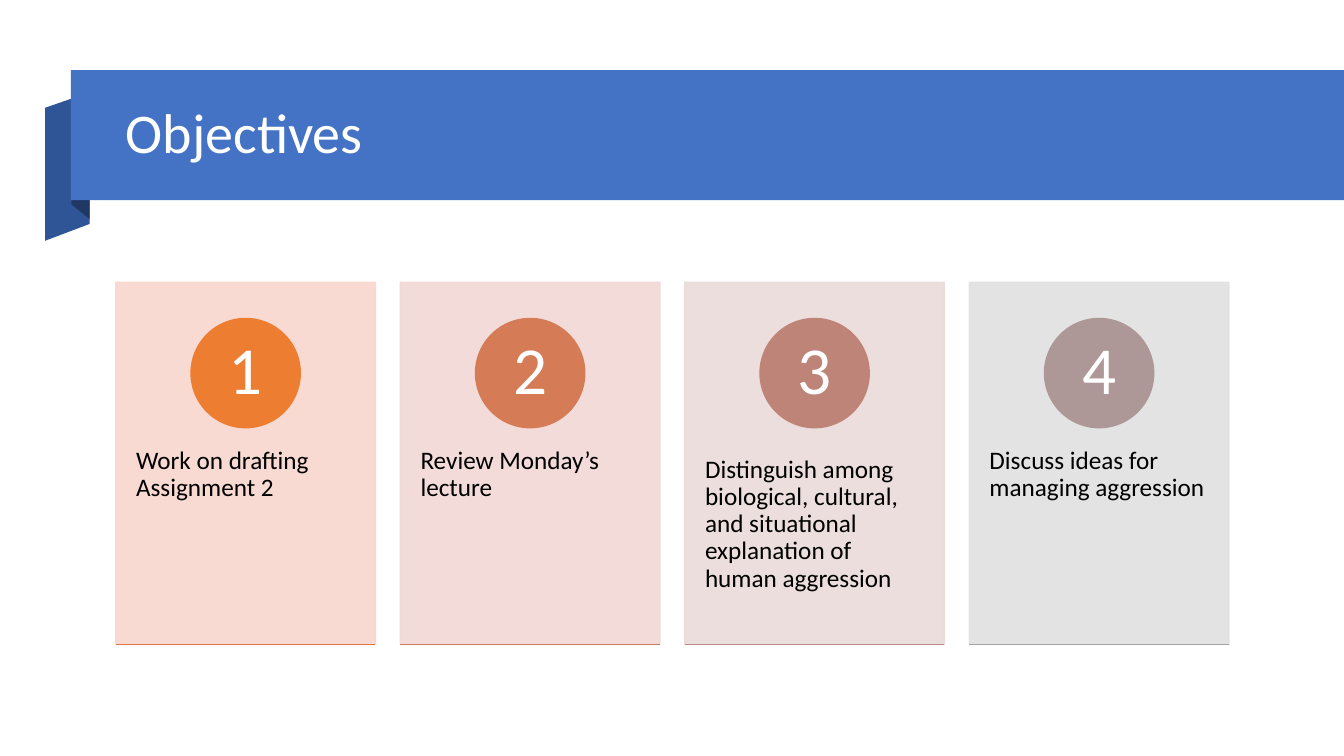
from dataclasses import dataclass

from lxml import etree
from pptx import Presentation
from pptx.dml.color import RGBColor
from pptx.enum.shapes import MSO_CONNECTOR, MSO_SHAPE
from pptx.enum.text import MSO_ANCHOR, PP_ALIGN
from pptx.oxml.ns import qn
from pptx.util import Pt

RECTANGLE, OVAL = MSO_SHAPE.RECTANGLE, MSO_SHAPE.OVAL
STRAIGHT = MSO_CONNECTOR.STRAIGHT
TOP, MIDDLE = MSO_ANCHOR.TOP, MSO_ANCHOR.MIDDLE
LEFT, CENTER = PP_ALIGN.LEFT, PP_ALIGN.CENTER


@dataclass(frozen=True)
class Theme:
    font: str = "Calibri"
    title_size: int = 40
    number_size: int = 48
    body_size: int = 18
    light: str = "FFFFFF"
    dark: str = "000000"
    banner: str = "4472C4"
    ribbon: str = "2F5597"
    fold: str = "203864"
    card_opacity: int = 90


THEME = Theme()

# Text, card colour, circle colour, base line colour
OBJECTIVES = [
    ("Work on drafting Assignment 2", "F8D7CE", "ED7D31", "E07A44"),
    ("Review Monday’s lecture", "F1D8D4", "D57B56", "CA7E67"),
    ("Distinguish among biological, cultural, and situational explanation "
     "of human aggression", "E9DBDA", "BF8478", "B68D88"),
    ("Discuss ideas for managing aggression", "E1E1E1", "AD9897", "A5A5A5"),
]

# Card grid, in points
CARD_LEFT, CARD_TOP, CARD_WIDTH, CARD_HEIGHT = 82.8, 201.6, 185.4, 258.8
CARD_PITCH = 203.2
CIRCLE_TOP, CIRCLE_SIZE = 227.5, 78
BODY_TOP, BODY_HEIGHT = 300.2, 155.5
BASE_Y = 460.5


def paint(shape, color, outlined=False, opacity=100):
    """Give a shape a flat fill, with an optional outline of the same colour."""
    shape.shadow.inherit = False
    shape.fill.solid()
    shape.fill.fore_color.rgb = RGBColor.from_string(color)
    if outlined:
        shape.line.color.rgb = RGBColor.from_string(color)
        shape.line.width = Pt(1)
    else:
        shape.line.fill.background()
    if opacity < 100:
        for color_element in shape._element.spPr.iter(qn("a:srgbClr")):
            alpha = etree.SubElement(color_element, qn("a:alpha"))
            alpha.set("val", str(opacity * 1000))


def add_block(slide, kind, box, color, outlined=False, opacity=100):
    shape = slide.shapes.add_shape(kind, *map(Pt, box))
    paint(shape, color, outlined, opacity)
    return shape


def add_outline(slide, points, color):
    corners = [(Pt(x), Pt(y)) for x, y in points]
    builder = slide.shapes.build_freeform(*corners[0])
    builder.add_line_segments(corners[1:], close=True)
    paint(builder.convert_to_shape(), color)


def write(shape, text, size, color, align=LEFT, anchor=TOP, insets=(7.2, 3.6)):
    frame = shape.text_frame
    horizontal, vertical = map(Pt, insets)
    frame_format = {
        "word_wrap": True, "vertical_anchor": anchor,
        "margin_left": horizontal, "margin_right": horizontal,
        "margin_top": vertical, "margin_bottom": vertical,
    }
    for name, value in frame_format.items():
        setattr(frame, name, value)
    paragraph = frame.paragraphs[0]
    paragraph.alignment = align
    paragraph.line_spacing = 0.9
    run = paragraph.add_run()
    run.text = text
    font_format = {"name": THEME.font, "size": Pt(size)}
    for name, value in font_format.items():
        setattr(run.font, name, value)
    run.font.color.rgb = RGBColor.from_string(color)


def add_text(slide, box, text, size, color, **layout):
    write(slide.shapes.add_textbox(*map(Pt, box)), text, size, color, **layout)


def add_base_line(slide, left, color):
    ends = (left, BASE_Y, left + CARD_WIDTH, BASE_Y)
    connector = slide.shapes.add_connector(STRAIGHT, *map(Pt, ends))
    connector.line.color.rgb = RGBColor.from_string(color)
    connector.line.width = Pt(1)
    etree.SubElement(connector._element.spPr, qn("a:effectLst"))


def add_banner(slide, slide_width):
    add_outline(slide, [(64, 66), (32.2, 77), (32.2, 172), (64, 160)], THEME.ribbon)
    add_outline(slide, [(64, 61), (51, 50.4), (51, 146), (64, 156.5)], THEME.fold)
    add_block(slide, RECTANGLE, (50.6, 50.2, slide_width - 50.6, 92.8), THEME.banner)
    add_text(slide, (82.8, 61.9, 811.4, 69.1), "Objectives",
             THEME.title_size, THEME.light, anchor=MIDDLE)


def add_card(slide, number, left, text, card_color, circle_color, line_color):
    add_block(slide, RECTANGLE, (left, CARD_TOP, CARD_WIDTH, CARD_HEIGHT),
              card_color, outlined=True, opacity=THEME.card_opacity)
    add_text(slide, (left, BODY_TOP, CARD_WIDTH, BODY_HEIGHT), text,
             THEME.body_size, THEME.dark, insets=(14.4, 25.9))
    circle_left = left + (CARD_WIDTH - CIRCLE_SIZE) / 2
    circle = add_block(slide, OVAL, (circle_left, CIRCLE_TOP, CIRCLE_SIZE, CIRCLE_SIZE),
                       circle_color, outlined=True)
    write(circle, str(number), THEME.number_size, THEME.light,
          align=CENTER, anchor=MIDDLE, insets=(6, 1))
    add_base_line(slide, left, line_color)


def main():
    presentation = Presentation()
    slide_width = 960
    presentation.slide_width, presentation.slide_height = Pt(slide_width), Pt(540)
    slide = presentation.slides.add_slide(presentation.slide_layouts[6])

    # Title ribbon
    add_banner(slide, slide_width)

    # Numbered cards
    for index, objective in enumerate(OBJECTIVES):
        add_card(slide, index + 1, CARD_LEFT + index * CARD_PITCH, *objective)

    presentation.save("out.pptx")


if __name__ == "__main__":
    main()
